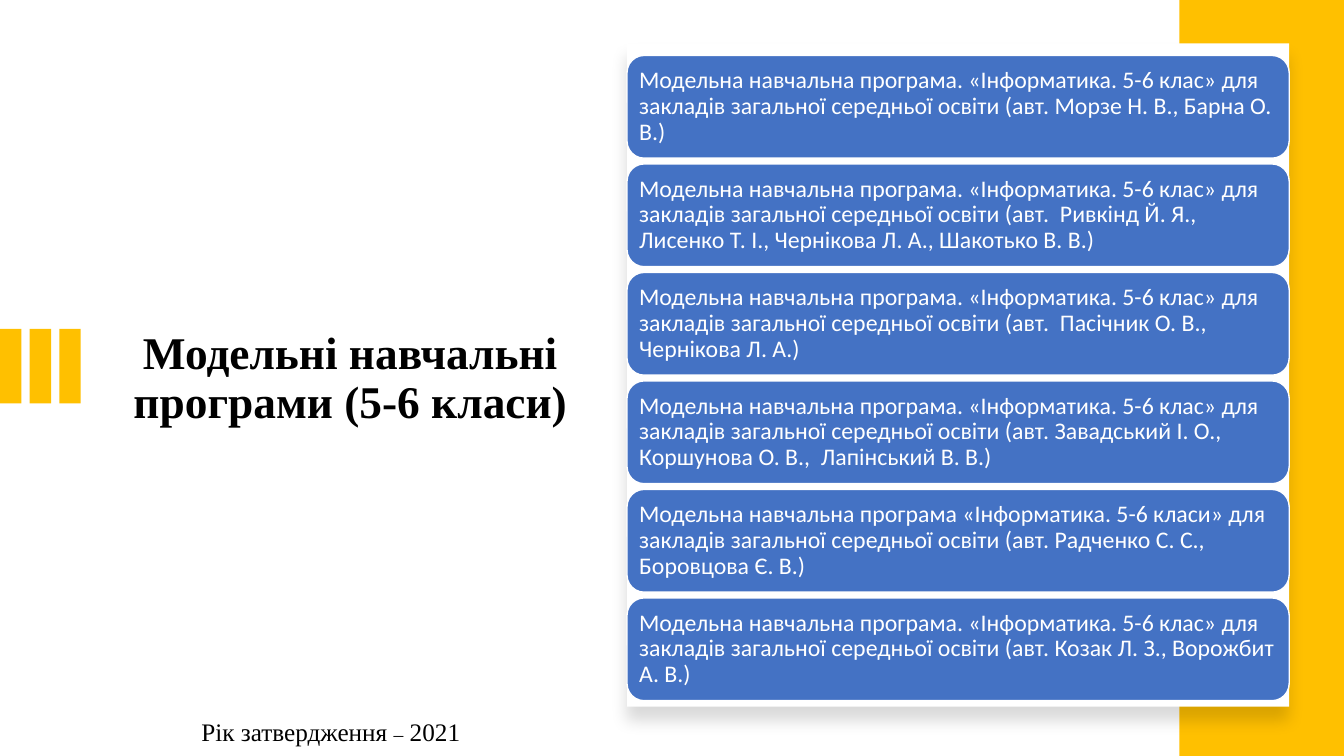
from lxml import etree
from pptx import Presentation
from pptx import util as u
from pptx.dml import color
from pptx.enum import shapes, text
from pptx.oxml import ns

GOLD, BLUE, WHITE, BLACK = "FFC000", "4472C4", "FFFFFF", "000000"
SERIF, SANS = "Times New Roman", "Calibri"
PROGRAMMES = [
    "Модельна навчальна програма. «Інформатика. 5-6 клас» для закладів загальної середньої освіти (авт. Морзе Н. В., Барна О. В.)",
    "Модельна навчальна програма. «Інформатика. 5-6 клас» для закладів загальної середньої освіти (авт.  Ривкінд Й. Я., Лисенко Т. І., Чернікова Л. А., Шакотько В. В.)",
    "Модельна навчальна програма. «Інформатика. 5-6 клас» для закладів загальної середньої освіти (авт.  Пасічник О. В., Чернікова Л. А.)",
    "Модельна навчальна програма. «Інформатика. 5-6 клас» для закладів загальної середньої освіти (авт. Завадський І. О., Коршунова О. В.,  Лапінський В. В.)",
    "Модельна навчальна програма «Інформатика. 5-6 класи» для закладів загальної середньої освіти (авт. Радченко С. С., Боровцова Є. В.)",
    "Модельна навчальна програма. «Інформатика. 5-6 клас» для закладів загальної середньої освіти (авт. Козак Л. З., Ворожбит А. В.)",
]


def rgb(value):
    """Turn a hex string into a colour."""
    return color.RGBColor.from_string(value)


def apply(target, values):
    """Set each attribute named in the format values."""
    for name, value in values.items():
        setattr(target, name, value)


def block(slide, box, fill, kind=shapes.MSO_SHAPE.RECTANGLE, outline=None):
    """Add a flat filled shape in the box."""
    shape = slide.shapes.add_shape(kind, *map(u.Pt, box))
    shape.shadow.inherit = False
    shape.fill.solid()
    shape.fill.fore_color.rgb = rgb(fill)
    if outline:
        shape.line.color.rgb = rgb(outline)
        shape.line.width = u.Pt(1)
    else:
        shape.line.fill.background()
    return shape


def write(frame, runs, typeface, ink, frame_format, paragraph_format):
    """Fill a text frame with one paragraph of (words, size, bold) runs."""
    apply(frame, {"word_wrap": True, **frame_format})
    paragraph = frame.paragraphs[0]
    apply(paragraph, paragraph_format)
    for words, size, bold in runs:
        run = paragraph.add_run()
        run.text = words
        apply(run.font, {"name": typeface, "size": u.Pt(size), "bold": bold})
        run.font.color.rgb = rgb(ink)


def cast_shadow(shape):
    """Give the shape a soft shadow falling straight down."""
    effects = shape._element.spPr.find(ns.qn("a:effectLst"))
    shadow = etree.SubElement(effects, ns.qn("a:outerShdw"), blurRad=str(u.Pt(11)),
                              dist=str(u.Pt(10)), dir="5400000", algn="t", rotWithShape="0")
    tint = etree.SubElement(shadow, ns.qn("a:srgbClr"), val=BLACK)
    etree.SubElement(tint, ns.qn("a:alpha"), val="15000")


def accent_stripes(slide, left, top, width, height):
    """Draw three gold stripes spread evenly across the box."""
    stripe = 15.3
    for index in range(3):
        block(slide, (left + index * (width - stripe) / 2, top, stripe, height), GOLD)


def heading(slide, left, top, width, height):
    """Write the slide title in the box."""
    title = slide.shapes.add_textbox(*map(u.Pt, (left, top, width, height)))
    write(title.text_frame, [("Модельні навчальні  програми (5-6 класи) ", 32.4, True)],
          SERIF, BLACK, {"vertical_anchor": text.MSO_ANCHOR.TOP},
          {"alignment": text.PP_ALIGN.CENTER, "line_spacing": 0.9})


def programme_list(slide, left, top, width, height):
    """Stack the programmes on a white card that fills the box."""
    cast_shadow(block(slide, (left, top, width, height), WHITE))
    margin, pitch, depth = 8.7, 77.5, 73.4
    insets = {f"margin_{side}": u.Pt(5.1) for side in ("left", "right", "top", "bottom")}
    for row, programme in enumerate(PROGRAMMES):
        pill = block(slide, (left, top + margin + row * pitch, width, depth), BLUE,
                     shapes.MSO_SHAPE.ROUNDED_RECTANGLE, WHITE)
        write(pill.text_frame, [(programme, 17, False)], SANS, WHITE,
              {"vertical_anchor": text.MSO_ANCHOR.MIDDLE, **insets},
              {"alignment": text.PP_ALIGN.LEFT, "line_spacing": 0.9})


def approval_year(slide, left, top, width, height):
    """Write the year of approval in the box."""
    note = slide.shapes.add_textbox(*map(u.Pt, (left, top, width, height)))
    runs = [("Рік затвердження ", 18, False), ("–", 14, False), (" 2021", 18, False)]
    write(note.text_frame, runs, SERIF, BLACK,
          {"auto_size": text.MSO_AUTO_SIZE.SHAPE_TO_FIT_TEXT}, {})


def main():
    """Build and save the slide."""
    deck = Presentation()
    apply(deck, {"slide_width": u.Pt(960), "slide_height": u.Pt(540)})
    slide = deck.slides.add_slide(deck.slide_layouts[6])
    heading(slide, 67.7, 232.5, 373, 96.5)
    accent_stripes(slide, 0, 235, 57.7, 53.2)
    block(slide, (842.4, 0, 117.6, 540), GOLD)
    programme_list(slide, 447.9, 30.9, 473, 473.8)
    approval_year(slide, 136.8, 508.3, 226.8, 29)
    deck.save("out.pptx")


if __name__ == "__main__":
    main()
